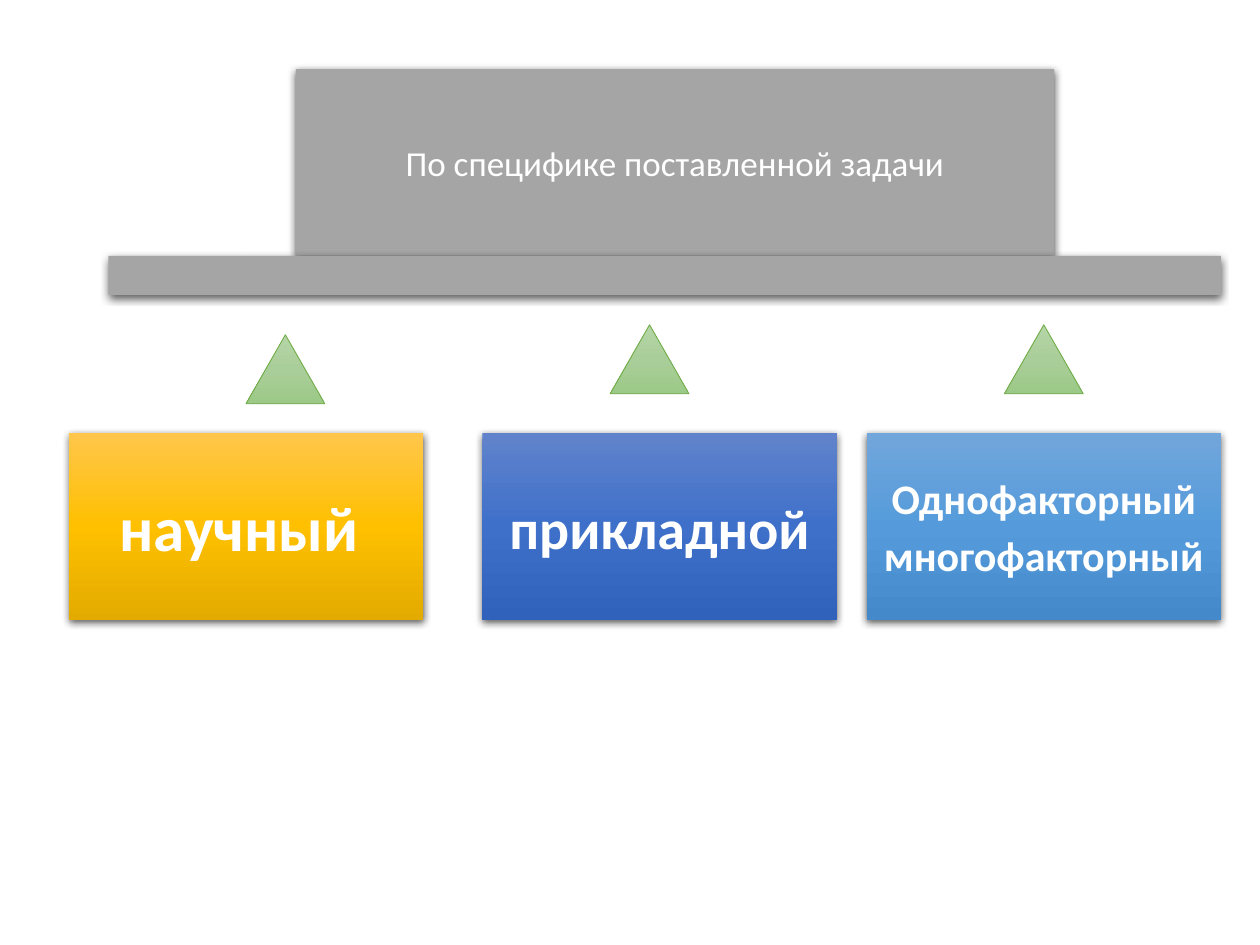
from lxml.etree import SubElement
from pptx import Presentation
from pptx.dml.color import RGBColor
from pptx.enum.shapes import MSO_SHAPE as Shape
from pptx.enum.text import MSO_ANCHOR, PP_ALIGN
from pptx.oxml.ns import qn
from pptx.util import Pt

COLORS = {
    "banner": "A5A5A5",
    "text": "FFFFFF",
    "shadow": "000000",
    "arrow_line": "70AD47",
    "arrow": ("B5D5A7", "AACE9A", "9CC987"),
    "scientific": ("FFC64B", "FFC000", "E3AB00"),
    "applied": ("6183CB", "3E70CA", "3062BB"),
    "factors": ("71A6DB", "559BDB", "448ACA"),
}


def add_block(slide, kind, box, color):
    """Add a shape without line or shadow, filled plainly or with a vertical gradient."""
    block = slide.shapes.add_shape(kind, *map(Pt, box))
    block.shadow.inherit = False
    block.line.fill.background()
    if isinstance(color, str):
        block.fill.solid()
        block.fill.fore_color.rgb = RGBColor.from_string(color)
        return block
    block.fill.gradient()
    block.fill.gradient_angle = 270
    stops = block.element.spPr.find(".//" + qn("a:gsLst"))
    stops.clear()
    for position, tone in zip((0, 50000, 100000), color):
        stop = SubElement(stops, qn("a:gs"), pos=str(position))
        SubElement(stop, qn("a:srgbClr"), val=tone)
    return block


def cast_shadow(block):
    """Give a block a soft shadow that falls downwards."""
    effects = block.element.spPr.find(qn("a:effectLst"))
    shadow = SubElement(effects, qn("a:outerShdw"), blurRad=str(Pt(4.5)),
                        dist=str(Pt(1.5)), dir="5400000", algn="ctr", rotWithShape="0")
    tone = SubElement(shadow, qn("a:srgbClr"), val=COLORS["shadow"])
    SubElement(tone, qn("a:alpha"), val="63000")


def write_label(block, label, size, bold):
    """Write a centred label with one paragraph per line."""
    frame = block.text_frame
    frame.word_wrap = True
    frame.vertical_anchor = MSO_ANCHOR.MIDDLE
    frame.text = label
    for paragraph in frame.paragraphs:
        paragraph.alignment = PP_ALIGN.CENTER
        for run in paragraph.runs:
            run.font.name = "Calibri"
            run.font.size = Pt(size)
            run.font.bold = bold
            run.font.color.rgb = RGBColor.from_string(COLORS["text"])


def add_title(slide, left, top, width, height):
    """Draw the title block."""
    title = add_block(slide, Shape.RECTANGLE, (left, top, width, height), COLORS["banner"])
    cast_shadow(title)
    write_label(title, "По специфике поставленной задачи", 20, False)


def add_bar(slide, left, top, width, height):
    """Draw the bar under the title."""
    cast_shadow(add_block(slide, Shape.RECTANGLE, (left, top, width, height), COLORS["banner"]))


def add_types(slide, left, top, width, height):
    """Draw the three kinds of experiment in a row."""
    kinds = (
        (0, "научный ", 36, "scientific"),
        (236.25, "прикладной", 32, "applied"),
        (455.75, "Однофакторный\nмногофакторный", 24, "factors"),
    )
    for offset, label, size, color in kinds:
        card = add_block(slide, Shape.RECTANGLE, (left + offset, top, width, height), COLORS[color])
        cast_shadow(card)
        write_label(card, label, size, True)
    ending = card.text_frame.paragraphs[-1].add_run()
    ending.text = " "
    ending.font.name = "Calibri"
    ending.font.size = Pt(28)
    ending.font.bold = False


def add_arrows(slide, left, top, width, height):
    """Draw the triangles that point up to the bar."""
    for across, down in ((0, 5.75), (208.1, 0), (433.4, 0)):
        arrow = add_block(slide, Shape.ISOSCELES_TRIANGLE,
                          (left + across, top + down, width, height), COLORS["arrow"])
        arrow.line.color.rgb = RGBColor.from_string(COLORS["arrow_line"])
        arrow.line.width = Pt(0.5)


def main():
    """Build and save the slide."""
    deck = Presentation()
    deck.slide_width, deck.slide_height = Pt(720), Pt(540)
    slide = deck.slides.add_slide(deck.slide_layouts[6])
    add_title(slide, 169, 39.5, 433.4, 106.7)
    add_types(slide, 39.4, 247.6, 202.6, 106.7)
    add_bar(slide, 61.9, 146.2, 635.8, 22.4)
    add_arrows(slide, 140.6, 185.6, 45, 39.4)
    deck.save("out.pptx")


if __name__ == "__main__":
    main()
